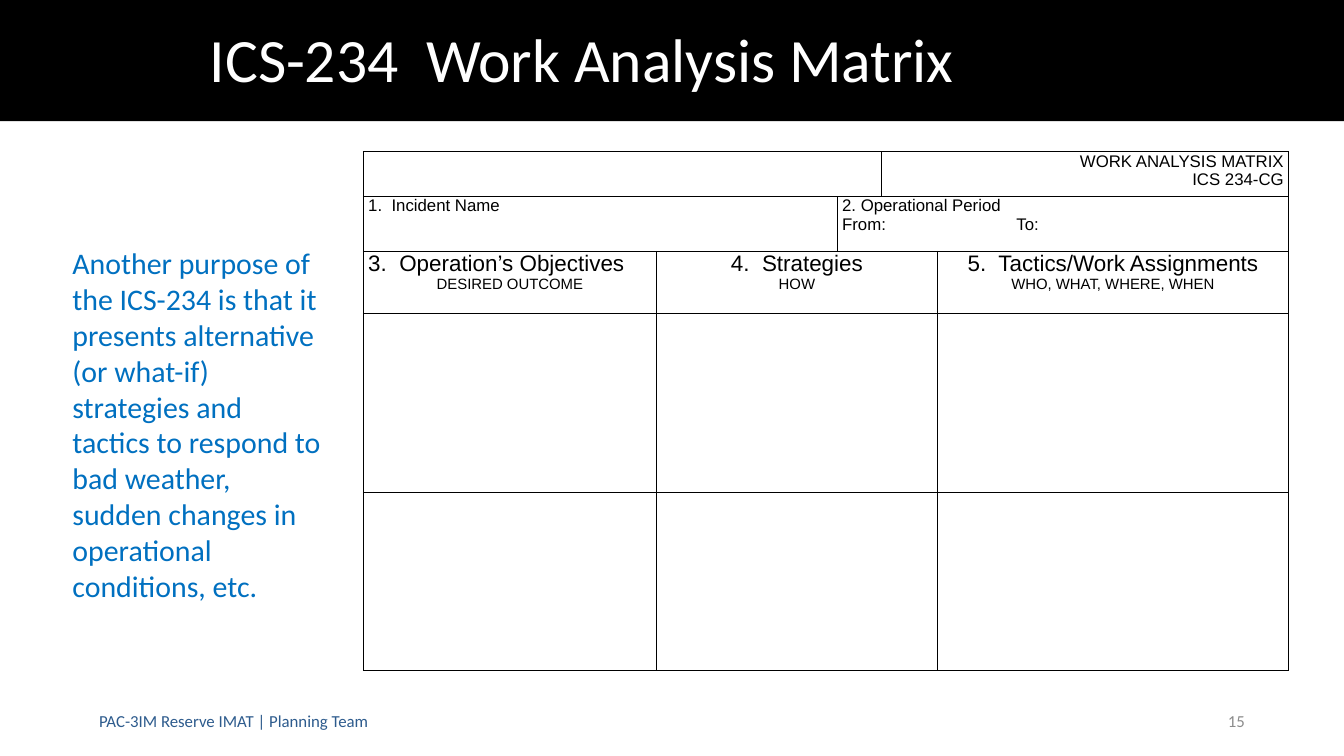
from lxml.etree import SubElement
from pptx import Presentation
from pptx.dml.color import RGBColor
from pptx.enum.shapes import MSO_SHAPE as Shape
from pptx.enum.text import MSO_ANCHOR as Anchor, PP_ALIGN as Align
from pptx.oxml import parse_xml
from pptx.oxml.ns import nsdecls, qn
from pptx.util import Pt

PX = 9525
BLACK = RGBColor(0, 0, 0)
WHITE = RGBColor(255, 255, 255)
BLUE = RGBColor(0x00, 0x70, 0xC0)
NAVY = RGBColor(0x2D, 0x5B, 0x8D)
GRAY = RGBColor(0x8C, 0x8C, 0x8C)


def style(para, size, color, name="Calibri", align=Align.LEFT):
    para.alignment = align
    para.font.size = Pt(size)
    para.font.name = name
    para.font.color.rgb = color


def place(shape, left, top, width, height):
    shape.left, shape.top = left * PX, top * PX
    shape.width, shape.height = width * PX, height * PX


deck = Presentation()
deck.slide_width, deck.slide_height = 1920 * PX, 1080 * PX
page = deck.slides.add_slide(deck.slide_layouts[5])

band = page.shapes.add_shape(Shape.RECTANGLE, 0, 0, 1920 * PX, 173 * PX)
band.shadow.inherit = False
band.fill.solid()
band.fill.fore_color.rgb = BLACK
band.line.fill.background()
page.shapes._spTree.insert(2, band._element)

title = page.shapes.title
place(title, 290, 5, 1596, 170)
title.text_frame.text = "ICS-234  Work Analysis Matrix"
title.text_frame.vertical_anchor = Anchor.MIDDLE
title.text_frame.paragraphs[0].line_spacing = 0.9
style(title.text_frame.paragraphs[0], 66, WHITE)

purpose = (
    "Another purpose of the ICS-234 is that it presents alternative (or what-if) strategies "
    "and tactics to respond to bad weather, sudden changes in operational conditions, etc."
)
for text, area, size, color, align, anchor in [
    ("PAC-3IM Reserve IMAT | Planning Team", (132, 1001, 874, 58), 18, NAVY, Align.LEFT, Anchor.MIDDLE),
    ("15", (1356, 1001, 432, 58), 18, GRAY, Align.RIGHT, Anchor.MIDDLE),
    (purpose, (94, 345, 375, 527), 32, BLUE, Align.LEFT, Anchor.TOP),
]:
    box = page.shapes.add_textbox(0, 0, 0, 0)
    place(box, *area)
    box.text_frame.word_wrap = True
    box.text_frame.vertical_anchor = anchor
    box.text_frame.text = text
    style(box.text_frame.paragraphs[0], size, color, align=align)

widths = [419, 258, 63, 80, 502]
heights = [64, 78, 89, 255, 255]
frame = page.shapes.add_table(5, 5, 519 * PX, 217 * PX, sum(widths) * PX, sum(heights) * PX)
matrix = frame.table
matrix.first_row = matrix.horz_banding = False
for column, width in zip(matrix.columns, widths):
    column.width = width * PX
for row, height in zip(matrix.rows, heights):
    row.height = height * PX

for cell in matrix.iter_cells():
    cell.margin_left = cell.margin_right = 7 * PX
    cell.margin_top = cell.margin_bottom = 0
    cell.fill.background()
    for index, side in enumerate(["lnL", "lnR", "lnT", "lnB"]):
        border = parse_xml(
            f'<a:{side} {nsdecls("a")} w="12700"><a:solidFill>'
            f'<a:srgbClr val="{BLACK}"/></a:solidFill></a:{side}>'
        )
        cell._tc.get_or_add_tcPr().insert(index, border)

for row, first, last in [(0, 0, 2), (0, 3, 4), (1, 0, 1), (1, 2, 4), (2, 1, 3), (3, 1, 3), (4, 1, 3)]:
    matrix.cell(row, first).merge(matrix.cell(row, last))

for row, column, lines in [
    (0, 3, [("WORK ANALYSIS MATRIX", 18, Align.RIGHT), ("ICS 234-CG", 18, Align.RIGHT)]),
    (1, 0, [("1.  Incident Name", 18, Align.LEFT)]),
    (1, 2, [("2. Operational Period", 18, Align.LEFT), ("From:\tTo:", 18, Align.LEFT)]),
    (2, 0, [("3.  Operation’s Objectives", 24, Align.LEFT), ("DESIRED OUTCOME", 16, Align.CENTER)]),
    (2, 1, [("4.  Strategies", 24, Align.CENTER), ("HOW", 16, Align.CENTER)]),
    (2, 4, [("5.  Tactics/Work Assignments", 24, Align.CENTER), ("WHO, WHAT, WHERE, WHEN", 16, Align.CENTER)]),
]:
    text_frame = matrix.cell(row, column).text_frame
    text_frame.text = "\n".join(text for text, size, align in lines)
    for para, (text, size, align) in zip(text_frame.paragraphs, lines):
        if "\t" in text:
            tabs = SubElement(para._p.get_or_add_pPr(), qn("a:tabLst"))
            SubElement(tabs, qn("a:tab"), pos=str(249 * PX), algn="l")
        style(para, size, BLACK, "Arial", align)

deck.save("out.pptx")
